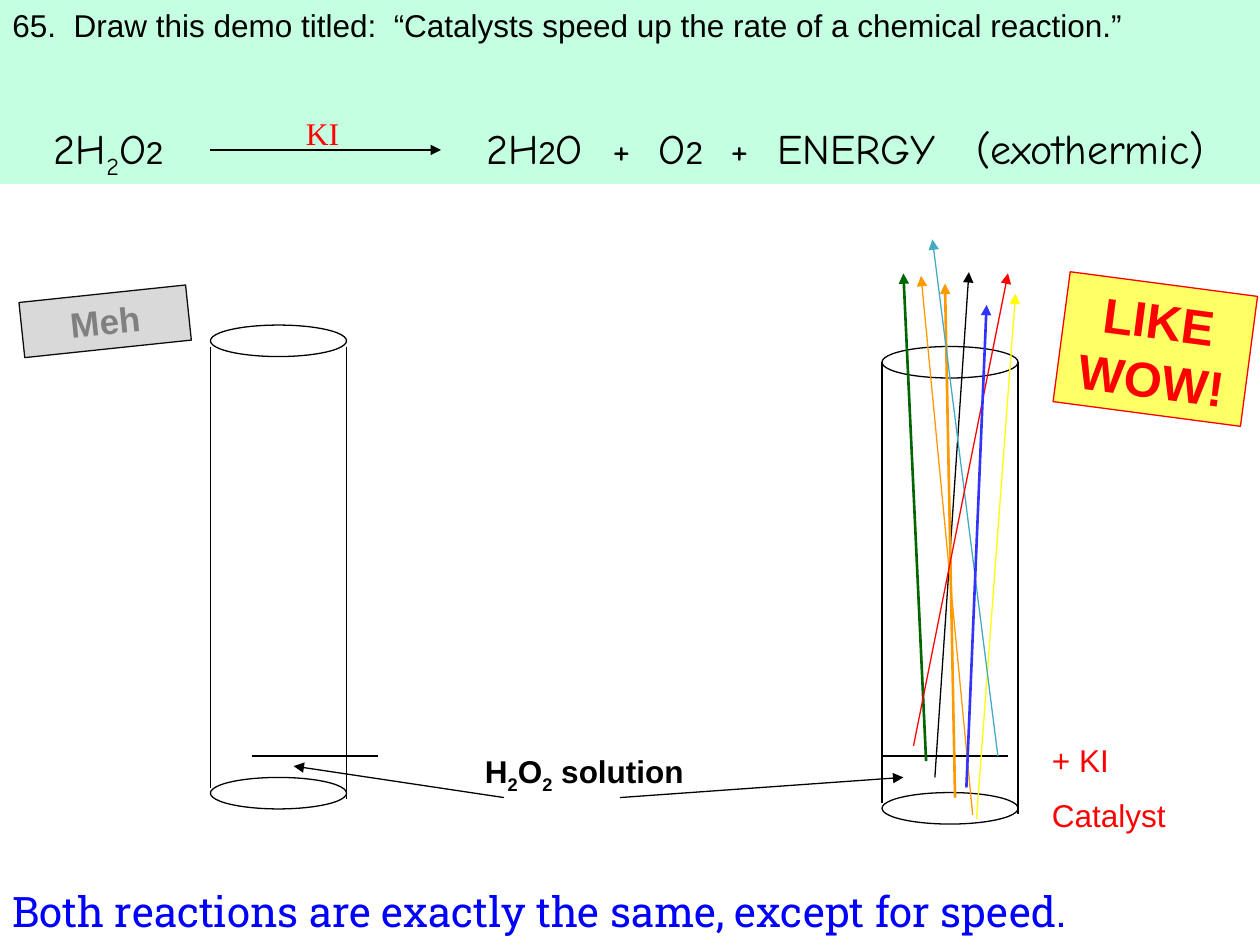
from dataclasses import dataclass
from typing import NamedTuple

from lxml.etree import SubElement
from pptx import Presentation
from pptx.dml.color import RGBColor
from pptx.enum.shapes import MSO_CONNECTOR as Conn, MSO_SHAPE as Shape
from pptx.enum.text import MSO_ANCHOR as Anchor, PP_ALIGN as Align
from pptx.oxml.ns import qn
from pptx.util import Inches, Pt


@dataclass(frozen=True)
class Theme:
    sans: str = "Arial"
    hand: str = "Comic Neue"
    slab: str = "Roboto Slab"
    serif: str = "Times New Roman"
    black: str = "000000"
    red: str = "FF0000"
    blue: str = "0000FF"
    mint: str = "C5FFE2"
    body: int = 18
    tag: int = 20
    large: int = 24
    shout: int = 28
    thin: float = 0.75
    thick: float = 1.5


T = Theme()


class Style(NamedTuple):
    size: float = T.body
    font: str = T.sans
    color: str = T.black
    bold: bool = False


class Run(NamedTuple):
    text: str
    style: Style = Style()
    subscript: bool = False


class Tube(NamedTuple):
    left: float
    rim_top: float
    base_top: float


class Ray(NamedTuple):
    start: tuple[float, float]
    end: tuple[float, float]
    color: str
    width: float = T.thin


class Tag(NamedTuple):
    box: tuple[float, float, float, float]
    angle: float
    fill: str
    line: str
    text: str
    style: Style


TUBE_W, RIM_H = 1.08, 0.25
# Liquid surface: start point, then the three points of each curve
SURFACE = [(0, 0), (0.05, 0.02), (0.07, 0.06), (0.12, 0.09),
           (0.18, 0.11), (0.25, 0.11), (0.32, 0.12),
           (0.34, 0.12), (0.45, 0.1), (0.5, 0.09),
           (0.56, 0.07), (0.61, 0.04), (0.68, 0.02),
           (0.78, 0.04), (1, 0.05), (1.1, 0.09)]

prs = Presentation()
prs.slide_width, prs.slide_height = Inches(10), Inches(7.5)
shapes = prs.slides.add_slide(prs.slide_layouts[6]).shapes


def rgb(value: str) -> RGBColor:
    return RGBColor.from_string(value)


def add_runs(p, runs: list[Run]) -> None:
    for item in runs:
        r = p.add_run()
        r.text = item.text
        r.font.size, r.font.name = Pt(item.style.size), item.style.font
        r.font.bold = item.style.bold
        r.font.color.rgb = rgb(item.style.color)
        if item.subscript:
            r._r.get_or_add_rPr().set("baseline", "-25000")


def fill_text(s, lines: list[list[Run]], gap: float = 0, align=Align.LEFT) -> None:
    tf = s.text_frame
    tf.word_wrap = True
    for i, runs in enumerate(lines):
        p = tf.add_paragraph() if i else tf.paragraphs[0]
        p.alignment = align
        p.space_before = Pt(gap if i else 0)
        add_runs(p, runs)


def add_label(box: tuple, lines: list[list[Run]], gap: float = 0) -> None:
    fill_text(shapes.add_textbox(*map(Inches, box)), lines, gap)


def outline(s, color: str = T.black) -> None:
    s.shadow.inherit = False
    s.line.color.rgb, s.line.width = rgb(color), Pt(T.thin)


def add_line(start: tuple, end: tuple, color: str = T.black,
             width: float = T.thin, arrow: bool = False) -> None:
    s = shapes.add_connector(Conn.STRAIGHT, *map(Inches, (*start, *end)))
    s.line.color.rgb, s.line.width = rgb(color), Pt(width)
    if arrow:
        SubElement(s.line._get_or_add_ln(), qn("a:tailEnd"), type="triangle")
    SubElement(s._element.spPr, qn("a:effectLst"))


def curve_points(nodes: list, steps: int = 8) -> list:
    points = [nodes[0]]
    for i in range(0, len(nodes) - 1, 3):
        for t in (k / steps for k in range(1, steps + 1)):
            weights = ((1 - t) ** 3, 3 * t * (1 - t) ** 2, 3 * t * t * (1 - t), t ** 3)
            points.append(tuple(sum(w * n[axis] for w, n in zip(weights, nodes[i:i + 4]))
                                for axis in (0, 1)))
    return points


def add_tube(tube: Tube) -> None:
    left, right, base = tube.left, tube.left + TUBE_W, tube.base_top
    for top in (tube.rim_top, base):
        s = shapes.add_shape(Shape.OVAL, *map(Inches, (left, top, TUBE_W, RIM_H)))
        s.fill.background()
        outline(s)
    wall_top = base - 3.42
    add_line((left, wall_top), (left, base + 0.08))
    add_line((right, wall_top), (right, base + 0.17))
    points = [(left + x, base - 0.38 + y) for x, y in curve_points(SURFACE)]
    builder = shapes.build_freeform(*points[0], scale=Inches(1))
    builder.add_line_segments(points[1:], close=False)
    s = builder.convert_to_shape()
    s.fill.background()
    outline(s)


def add_tag(tag: Tag) -> None:
    s = shapes.add_shape(Shape.RECTANGLE, *map(Inches, tag.box))
    s.rotation = tag.angle
    s.fill.solid()
    s.fill.fore_color.rgb = rgb(tag.fill)
    outline(s, tag.line)
    fill_text(s, [[Run(tag.text, tag.style)]], align=Align.CENTER)


def add_header() -> None:
    s = shapes.add_shape(Shape.RECTANGLE, 0, 0, Inches(10), Inches(1.46))
    s.shadow.inherit = False
    s.fill.solid()
    s.fill.fore_color.rgb = rgb(T.mint)
    s.line.fill.background()
    s.text_frame.vertical_anchor = Anchor.TOP
    hand = Style(T.large, T.hand)
    title = "65.  Draw this demo titled:  “Catalysts speed up the rate of a chemical reaction.”"
    equation = [Run("\t2H", hand), Run("2", hand, True), Run("O", hand), Run("2"),
                Run("\t2H", hand), Run("2"), Run("O\t+\tO", hand), Run("2"),
                Run("\t+\tENERGY\t(exothermic)", hand)]
    fill_text(s, [[Run(title)], equation], gap=45)
    # Tab stops set the columns of the equation
    tabs = SubElement(s.text_frame.paragraphs[1]._p.get_or_add_pPr(), qn("a:tabLst"))
    for pos in (0.33, 3.76, 4.76, 5.13, 5.7, 6.07, 7.65):
        SubElement(tabs, qn("a:tab"), pos=str(Inches(pos)), algn="l")


# Header with the equation and its reaction arrow
add_header()
add_line((1.67, 1.19), (3.5, 1.19), arrow=True)
add_label((2.33, 0.86, 0.75, 0.4), [[Run("KI", Style(font=T.serif, color=T.red))]])

# Test tubes
for tube in (Tube(1.67, 2.58, 6.17), Tube(7, 2.75, 6.29)):
    add_tube(tube)

# Labels, with pointers to both liquids
bold, red = Style(bold=True), Style(color=T.red)
add_label((3.75, 5.92, 2.08, 0.4), [[Run("H", bold), Run("2", bold, True), Run("O", bold),
                                     Run("2", bold, True), Run(" solution", bold)]])
add_line((4, 6.33), (2.33, 6.08), arrow=True)
add_line((4.92, 6.33), (7.17, 6.17), arrow=True)
add_label((8.25, 5.83, 1.25, 0.85), [[Run("+ KI", red)], [Run("Catalyst", red)]], gap=10)

# Rays bursting from the catalysed tube
for ray in (Ray((7.35, 6.04), (7.17, 2.17), "006600", T.thick),
            Ray((7.42, 6.17), (7.69, 2.16), T.black),
            Ray((7.58, 6.33), (7.5, 2.25), "FF9900", T.thick),
            Ray((7.75, 6.5), (8.06, 2.33), "FFFF00"),
            Ray((7.92, 6), (7.4, 1.9), "46AAC5"),
            Ray((7.72, 6.47), (7.31, 2.19), "FF9900"),
            Ray((7.25, 5.92), (8, 2.17), T.red),
            Ray((7.67, 6.25), (7.83, 2.42), "3333FF", T.thick)):
    add_line(*ray, arrow=True)

# Tilted verdicts
for tag in (Tag((8.42, 2.25, 1.5, 1.04), 7.5, "FFFF66", T.red, "LIKE WOW!",
                Style(T.shout, color=T.red, bold=True)),
            Tag((0.17, 2.33, 1.33, 0.44), 354, "D9D9D9", "0D0D0D", "Meh",
                Style(T.tag, color="808080", bold=True))):
    add_tag(tag)

# Conclusion
add_label((0, 6.98, 10, 0.5), [[Run("Both reactions are exactly the same, except for speed.",
                                    Style(T.large, T.slab, T.blue))]])

prs.save("out.pptx")
